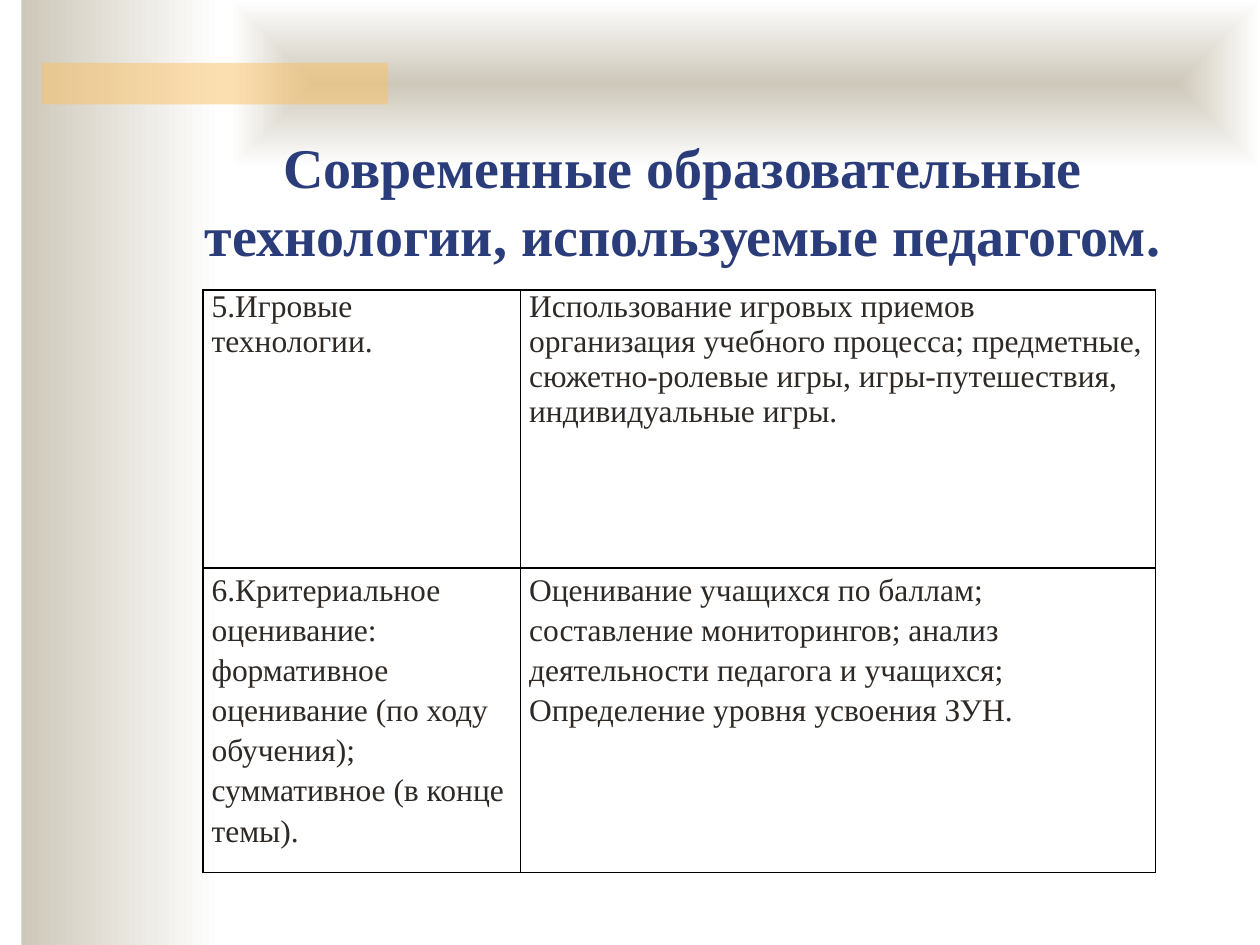
import lxml.etree
import pptx
import pptx.dml.color
import pptx.enum.shapes
import pptx.enum.text
import pptx.oxml
import pptx.oxml.ns
import pptx.util
from pptx.util import Inches

COLORS = {"sand": "CEC8BA", "white": "FFFFFF", "amber": "FAC164",
          "title": "2A3D7A", "text": "2E2924", "border": "000000"}
FONT = "Times New Roman"
TITLE = "Современные образовательные технологии, используемые педагогом."
TECHNOLOGIES = [
    (2.21, 1.0, [
        ["5.Игровые технологии."],
        ["Использование игровых приемов организация учебного процесса; предметные, "
         "сюжетно-ролевые игры, игры-путешествия, индивидуальные игры."]]),
    (2.23, 1.15, [
        ["6.Критериальное оценивание: формативное оценивание (по ходу обучения); "
         "суммативное (в конце темы)."],
        ["Оценивание учащихся по баллам; составление мониторингов; анализ "
         "деятельности педагога и учащихся;",
         "Определение уровня усвоения ЗУН."]]),
]


def rgb(name):
    """Return the named colour."""
    return pptx.dml.color.RGBColor.from_string(COLORS[name])


def add_element(parent, tag, **attributes):
    """Append a DrawingML element to parent and return it."""
    return lxml.etree.SubElement(parent, pptx.oxml.ns.qn(tag), attributes)


def set_font(paragraph, size, color, bold=False):
    """Set the font of a whole paragraph."""
    font = paragraph.font
    font.name, font.size, font.bold = FONT, pptx.util.Pt(size), bold
    font.color.rgb = rgb(color)


def add_panel(slide, left, top, width, height):
    """Add a plain rectangle without outline or shadow."""
    panel = slide.shapes.add_shape(
        pptx.enum.shapes.MSO_SHAPE.RECTANGLE,
        Inches(left), Inches(top), Inches(width), Inches(height))
    panel.shadow.inherit = False
    panel.line.fill.background()
    return panel


def fade_to_white(panel):
    """Fill a panel with a gradient from sand to white, left to right."""
    panel.fill.gradient()
    panel.fill.gradient_angle = 0
    for stop, color in zip(panel.fill.gradient_stops, ("sand", "white")):
        stop.color.rgb = rgb(color)


def add_backdrop(slide, left, top, width, height):
    """Add the side band, the top band and the amber bar in the given box."""
    side_band = add_panel(slide, left, top, 1.58, height)
    fade_to_white(side_band)

    top_band = add_panel(slide, left + 1.66, top, width - 1.66, 1.33)
    fade_to_white(top_band)
    linear = top_band._element.spPr.find(".//" + pptx.oxml.ns.qn("a:lin"))
    gradient = linear.getparent()
    gradient.remove(linear)
    from_centre = add_element(gradient, "a:path", path="shape")
    add_element(from_centre, "a:fillToRect", l="50000", t="50000", r="50000", b="50000")

    amber_bar = add_panel(slide, left + 0.16, top + 0.5, 2.75, 0.33)
    amber_bar.fill.solid()
    amber_bar.fill.fore_color.rgb = rgb("amber")
    amber = amber_bar._element.spPr.find(".//" + pptx.oxml.ns.qn("a:srgbClr"))
    add_element(amber, "a:alpha", val="50000")


def add_title(slide, left, top, width, height):
    """Add the centred heading at the bottom of the given box."""
    heading = slide.shapes.add_textbox(
        Inches(left), Inches(top), Inches(width), Inches(height)).text_frame
    heading.word_wrap = True
    heading.vertical_anchor = pptx.enum.text.MSO_ANCHOR.BOTTOM
    paragraph = heading.paragraphs[0]
    paragraph.text = TITLE
    paragraph.alignment = pptx.enum.text.PP_ALIGN.CENTER
    set_font(paragraph, 32, "title", bold=True)


def add_borders(cell):
    """Draw a thin line on each side of a cell."""
    properties = cell._tc.get_or_add_tcPr()
    for side in ("a:lnL", "a:lnR", "a:lnT", "a:lnB"):
        line = add_element(properties, side, w=str(pptx.util.Pt(1)))
        add_element(add_element(line, "a:solidFill"), "a:srgbClr", val=COLORS["border"])


def fill_cell(cell, texts, line_spacing):
    """Write the paragraphs of one cell and style it."""
    cell.margin_left = cell.margin_right = Inches(0.07)
    cell.margin_top = cell.margin_bottom = 0
    add_borders(cell)
    cell.fill.background()
    cell.text = "\n".join(texts)
    for paragraph in cell.text_frame.paragraphs:
        paragraph.line_spacing = line_spacing
        set_font(paragraph, 18, "text")


def add_technologies(slide, left, top, width):
    """Add the table of technologies, its second column twice as wide."""
    height = sum(row_height for row_height, _, _ in TECHNOLOGIES)
    table = slide.shapes.add_table(
        len(TECHNOLOGIES), 2,
        Inches(left), Inches(top), Inches(width), Inches(height)).table
    table.first_row = table.horz_banding = False
    for column, share in zip(table.columns, (1, 2)):
        column.width = Inches(width * share / 3)
    for row, (row_height, line_spacing, cells) in zip(table.rows, TECHNOLOGIES):
        row.height = Inches(row_height)
        for cell, texts in zip(row.cells, cells):
            fill_cell(cell, texts, line_spacing)


def main():
    """Build the slide and save it."""
    presentation = pptx.Presentation()
    presentation.slide_width, presentation.slide_height = Inches(10), Inches(7.5)
    slide = presentation.slides.add_slide(presentation.slide_layouts[6])
    add_backdrop(slide, 0.17, 0, 9.83, 7.5)
    add_title(slide, 1.17, 0.92, 8.5, 1.25)
    add_technologies(slide, 1.61, 2.3, 7.56)
    presentation.save("out.pptx")


if __name__ == "__main__":
    main()
